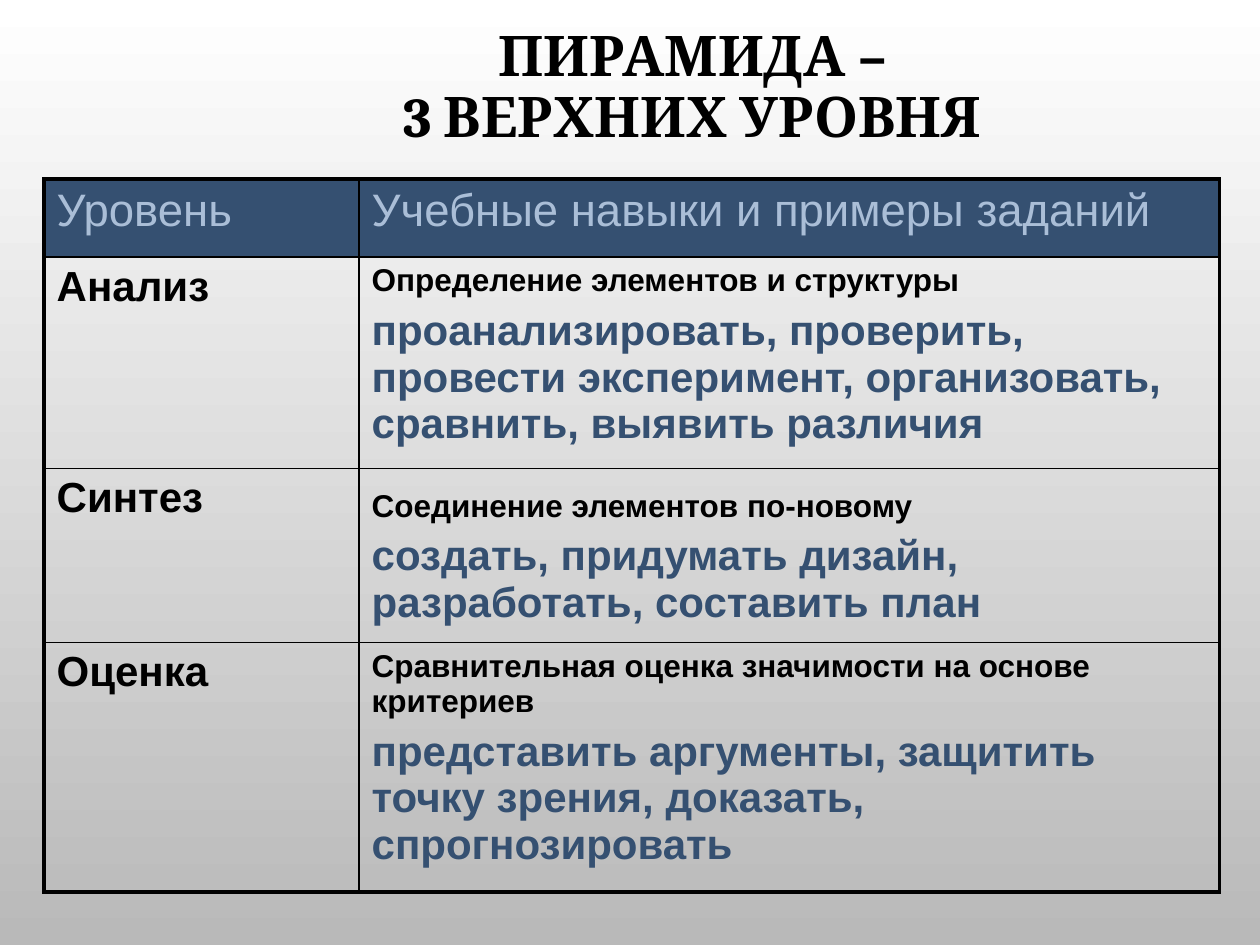
from dataclasses import dataclass

from lxml import etree
from pptx import Presentation
from pptx.dml.color import RGBColor
from pptx.enum.text import MSO_ANCHOR, PP_ALIGN
from pptx.oxml.ns import qn
from pptx.util import Inches, Pt

CENTER = PP_ALIGN.CENTER
MIDDLE = MSO_ANCHOR.MIDDLE


@dataclass(frozen=True)
class Theme:
    black: str = "000000"
    navy: str = "355071"
    pale_blue: str = "AABED7"
    background_top: str = "FFFFFF"
    background_bottom: str = "B9B9B9"
    title_font: str = "Cambria"
    body_font: str = "Arial"
    title_size: int = 32
    header_size: int = 26
    level_size: int = 24
    skill_size: int = 18
    outer_border: float = 2.25
    inner_border: float = 1


THEME = Theme()
SLIDE_WIDTH, SLIDE_HEIGHT = 10, 7.5
COLUMN_WIDTHS = [2.5, 6.83]
ROW_HEIGHTS = [0.62, 1.68, 1.38, 1.98]
TABLE_LEFT, TABLE_TOP = 0.35, 1.42

TITLE = "ПИРАМИДА –\v3 ВЕРХНИХ УРОВНЯ"
HEADERS = ["Уровень", "Учебные навыки и примеры заданий"]
# Level, skill, example tasks, line height of the skill in points
LEVELS = [
    ("Анализ", "Определение элементов и структуры",
     "проанализировать, проверить, провести эксперимент, организовать, "
     "сравнить, выявить различия", None),
    ("Синтез", "Соединение элементов по-новому",
     "создать, придумать дизайн, разработать, составить план", 28),
    ("Оценка", "Сравнительная оценка значимости на основе критериев",
     "представить аргументы, защитить точку зрения, доказать, "
     "спрогнозировать", None),
]


def style(paragraph, size, color, bold=True, name=THEME.body_font):
    font = paragraph.font
    font.name, font.size, font.bold = name, Pt(size), bold
    font.color.rgb = RGBColor.from_string(color)


def paint_background(slide):
    fill = slide.background.fill
    fill.gradient()
    fill.gradient_angle = 270
    colors = (THEME.background_top, THEME.background_bottom)
    for position, (stop, color) in enumerate(zip(fill.gradient_stops, colors)):
        stop.position = position
        stop.color.rgb = RGBColor.from_string(color)


def add_title(slide):
    box = slide.shapes.add_textbox(
        Inches(1.25), Inches(0.08), Inches(8.49), Inches(1.25))
    frame = box.text_frame
    frame.word_wrap = True
    frame.vertical_anchor = MIDDLE
    frame.text = TITLE
    paragraph = frame.paragraphs[0]
    paragraph.alignment = CENTER
    paragraph.line_spacing = 0.9
    style(paragraph, THEME.title_size, THEME.black, name=THEME.title_font)


def add_borders(cell, row, column):
    """Draw thick lines on the table's outline and thin ones inside it."""
    outer_sides = {
        "L": column == 0,
        "R": column == len(COLUMN_WIDTHS) - 1,
        "T": row == 0,
        "B": row == len(ROW_HEIGHTS) - 1,
    }
    properties = cell._tc.get_or_add_tcPr()
    for side, is_outer in outer_sides.items():
        width = THEME.outer_border if is_outer else THEME.inner_border
        line = etree.SubElement(properties, qn(f"a:ln{side}"), w=str(Pt(width)))
        fill = etree.SubElement(line, qn("a:solidFill"))
        etree.SubElement(fill, qn("a:srgbClr"), val=THEME.black)


def add_grid(slide):
    """Add the empty table with its borders and fills."""
    table = slide.shapes.add_table(
        len(ROW_HEIGHTS), len(COLUMN_WIDTHS),
        Inches(TABLE_LEFT), Inches(TABLE_TOP),
        Inches(sum(COLUMN_WIDTHS)), Inches(sum(ROW_HEIGHTS))).table
    table.first_row = table.horz_banding = False
    for column, width in zip(table.columns, COLUMN_WIDTHS):
        column.width = Inches(width)
    for row_index, height in enumerate(ROW_HEIGHTS):
        table.rows[row_index].height = Inches(height)
        for column_index in range(len(COLUMN_WIDTHS)):
            cell = table.cell(row_index, column_index)
            add_borders(cell, row_index, column_index)
            if row_index == 0:
                cell.fill.solid()
                cell.fill.fore_color.rgb = RGBColor.from_string(THEME.navy)
            else:
                cell.fill.background()
    return table


def write_cell(cell, text, size, color, bold=True):
    cell.text = text
    paragraph = cell.text_frame.paragraphs[0]
    style(paragraph, size, color, bold)
    return paragraph


def fill_table(table):
    for column, header in enumerate(HEADERS):
        write_cell(table.cell(0, column), header,
                   THEME.header_size, THEME.pale_blue, bold=False)
    for row, (level, skill, tasks, line_height) in enumerate(LEVELS, start=1):
        write_cell(table.cell(row, 0), level, THEME.level_size, THEME.black)
        cell = table.cell(row, 1)
        paragraph = write_cell(cell, skill, THEME.skill_size, THEME.black)
        if line_height:
            paragraph.line_spacing = Pt(line_height)
        paragraph = cell.text_frame.add_paragraph()
        paragraph.text = tasks
        paragraph.space_before = Pt(5)
        style(paragraph, THEME.level_size, THEME.navy)


def main():
    presentation = Presentation()
    presentation.slide_width = Inches(SLIDE_WIDTH)
    presentation.slide_height = Inches(SLIDE_HEIGHT)
    slide = presentation.slides.add_slide(presentation.slide_layouts[6])
    paint_background(slide)
    add_title(slide)
    fill_table(add_grid(slide))
    presentation.save("out.pptx")


if __name__ == "__main__":
    main()
